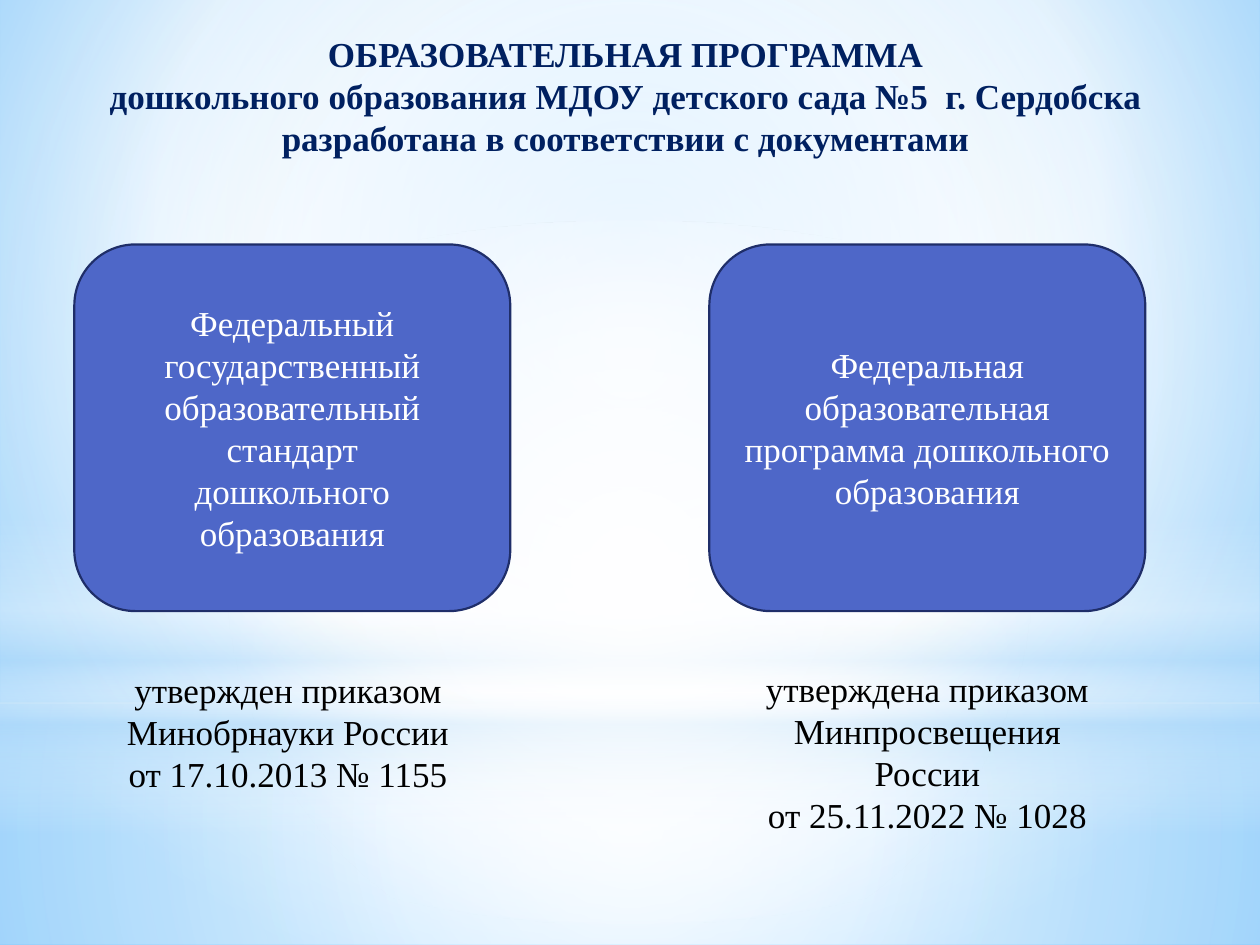
"""Builds the slide on the documents behind the preschool educational programme."""
import lxml.etree
import pptx
import pptx.dml.color
import pptx.enum.shapes
import pptx.enum.text
import pptx.oxml.ns
import pptx.util

Inches = pptx.util.Inches
Pt = pptx.util.Pt
RGBColor = pptx.dml.color.RGBColor
MSO_SHAPE = pptx.enum.shapes.MSO_SHAPE
MSO_ANCHOR = pptx.enum.text.MSO_ANCHOR
qn = pptx.oxml.ns.qn

NAVY = RGBColor(0x00, 0x20, 0x60)
INDIGO = RGBColor(0x4E, 0x67, 0xC8)
DARK_INDIGO = RGBColor(0x1F, 0x2E, 0x69)
WHITE = RGBColor(0xFF, 0xFF, 0xFF)
BLACK = RGBColor(0x00, 0x00, 0x00)
PALE_BLUE = RGBColor(0xB4, 0xDC, 0xFA)
SKY = RGBColor(0x9E, 0xD5, 0xFF)
BRIGHT_BLUE = RGBColor(0x5B, 0xB9, 0xFF)
CENTRE = (50, 50, 50, 50)


def paint_gradient(fill, owner, stops, focus=None):
    fill.gradient()
    gradient = owner.find(".//" + qn("a:gradFill"))
    for child in list(gradient):
        gradient.remove(child)
    stop_list = lxml.etree.SubElement(gradient, qn("a:gsLst"))
    for position, color, opacity in stops:
        stop = lxml.etree.SubElement(stop_list, qn("a:gs"), pos=str(position * 1000))
        tint = lxml.etree.SubElement(stop, qn("a:srgbClr"), val=str(color))
        if opacity < 100:
            lxml.etree.SubElement(tint, qn("a:alpha"), val=str(opacity * 1000))
    if focus:
        radial = lxml.etree.SubElement(gradient, qn("a:path"), path="circle")
        sides = {side: str(share * 1000) for side, share in zip("ltrb", focus)}
        lxml.etree.SubElement(radial, qn("a:fillToRect"), **sides)
    else:
        lxml.etree.SubElement(gradient, qn("a:lin"), ang="5400000", scaled="0")


def write_text(shape, text, color=BLACK, bold=False, anchor=MSO_ANCHOR.TOP):
    frame = shape.text_frame
    frame.word_wrap = True
    frame.vertical_anchor = anchor
    frame.text = text
    for paragraph in frame.paragraphs:
        paragraph.alignment = pptx.enum.text.PP_ALIGN.CENTER
        for run in paragraph.runs:
            run.font.name = "Times New Roman"
            run.font.size = Pt(20)
            run.font.bold = bold
            run.font.color.rgb = color
    return frame


deck = pptx.Presentation()
deck.slide_width, deck.slide_height = Inches(10), Inches(7.5)
slide = deck.slides.add_slide(deck.slide_layouts[6])
shapes = slide.shapes

paint_gradient(
    slide.background.fill, slide.element,
    [(0, SKY, 100), (60, WHITE, 100), (100, BRIGHT_BLUE, 100)], (20, 10, 20, 60),
)

glows = [
    (MSO_SHAPE.RECTANGLE, 5.58, 1.92,
     [(0, WHITE, 91), (37, WHITE, 76), (100, PALE_BLUE, 79)], CENTRE),
    (MSO_SHAPE.RECTANGLE, 0, 5.58,
     [(0, WHITE, 89), (48, WHITE, 62), (100, PALE_BLUE, 79)], CENTRE),
    (MSO_SHAPE.RECTANGLE, 4.12, 2.5,
     [(0, WHITE, 0), (29, WHITE, 30), (45, PALE_BLUE, 40),
      (55, WHITE, 26), (65, PALE_BLUE, 60), (100, WHITE, 0)], None),
    (MSO_SHAPE.OVAL, 1.75, 5.58, [(0, WHITE, 100), (56, WHITE, 0)], CENTRE),
]
for outline, top, height, stops, focus in glows:
    glow = shapes.add_shape(outline, 0, Inches(top), Inches(10), Inches(height))
    glow.shadow.inherit = False
    glow.line.fill.background()
    paint_gradient(glow.fill, glow.element, stops, focus)

heading = shapes.add_textbox(Inches(0.2), Inches(0.21), Inches(9.53), Inches(1.11))
write_text(
    heading,
    "ОБРАЗОВАТЕЛЬНАЯ ПРОГРАММА\n"
    "дошкольного образования МДОУ детского сада №5  г. Сердобска\n"
    "разработана в соответствии с документами",
    color=NAVY, bold=True,
)

documents = [
    (0.59, "Федеральный\nгосударственный\nобразовательный\nстандарт\nдошкольного\nобразования"),
    (5.63, "Федеральная образовательная программа дошкольного образования"),
]
for left, title in documents:
    card = shapes.add_shape(
        MSO_SHAPE.ROUNDED_RECTANGLE, Inches(left), Inches(1.94), Inches(3.46), Inches(2.91)
    )
    card.shadow.inherit = False
    card.fill.solid()
    card.fill.fore_color.rgb = INDIGO
    card.line.color.rgb = DARK_INDIGO
    card.line.width = Pt(1.25)
    write_text(card, title, color=WHITE, anchor=MSO_ANCHOR.MIDDLE)

orders = [
    (0.59, 5.26, "утвержден приказом Минобрнауки России\vот 17.10.2013 № 1155"),
    (5.55, 5.25, "утверждена приказом Минпросвещения России\vот 25.11.2022 № 1028"),
]
for left, top, decree in orders:
    order = shapes.add_textbox(Inches(left), Inches(top), Inches(3.39), Inches(1.11))
    decree_frame = write_text(order, decree)

programme_order = decree_frame.paragraphs[0]
programme_order.space_before = Pt(12)
programme_order.space_after = Pt(2)
programme_order._p.get_or_add_pPr().set("marL", str(Inches(0.23)))

deck.save("out.pptx")
